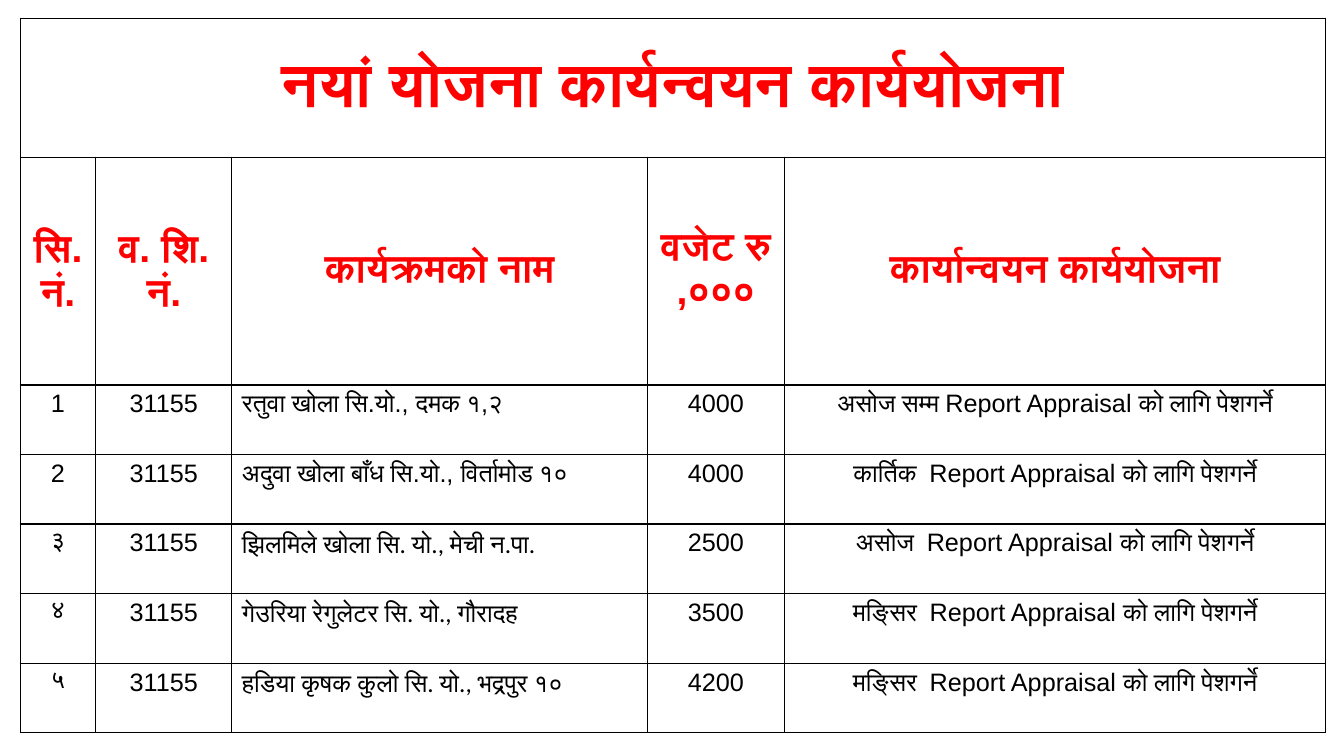
from dataclasses import dataclass

from lxml import etree
from pptx import Presentation
from pptx.dml.color import RGBColor
from pptx.enum.text import MSO_ANCHOR, PP_ALIGN
from pptx.oxml.ns import qn
from pptx.util import Inches, Pt

LEFT, CENTER = PP_ALIGN.LEFT, PP_ALIGN.CENTER
TOP, MIDDLE = MSO_ANCHOR.TOP, MSO_ANCHOR.MIDDLE
BLANK_LAYOUT = 6


@dataclass(frozen=True)
class Theme:
    heading: str = "FF0000"
    body: str = "000000"
    border: str = "000000"
    paper: str = "FFFFFF"
    title_size: int = 44
    header_size: int = 28
    body_size: int = 18
    border_width: int = 1
    font: str = "Arial"
    alternate_font: str = "Calibri"


class PlanSlide:
    def __init__(self, slide, theme):
        self.slide = slide
        self.theme = theme

    def add_grid(self, left, top, widths, heights):
        grid = self.slide.shapes.add_table(
            len(heights), len(widths), Inches(left), Inches(top),
            Inches(sum(widths)), Inches(sum(heights))).table
        for column, width in zip(grid.columns, widths):
            column.width = Inches(width)
        for row, height in zip(grid.rows, heights):
            row.height = Inches(height)
        for cell in grid.iter_cells():
            self.draw_borders(cell)
            cell.fill.solid()
            cell.fill.fore_color.rgb = RGBColor.from_string(self.theme.paper)
        return grid

    def draw_borders(self, cell):
        properties = cell._tc.get_or_add_tcPr()
        for side in ("a:lnL", "a:lnR", "a:lnT", "a:lnB"):
            edge = etree.SubElement(
                properties, qn(side), w=str(Pt(self.theme.border_width)))
            fill = etree.SubElement(edge, qn("a:solidFill"))
            etree.SubElement(fill, qn("a:srgbClr"), val=self.theme.border)

    def fill_cell(self, cell, text, size, color, bold=False, align=CENTER,
                  anchor=TOP, font=None):
        cell.vertical_anchor = anchor
        cell.text = text
        paragraph = cell.text_frame.paragraphs[0]
        paragraph.alignment = align
        paragraph.font.name = font or self.theme.font
        paragraph.font.size = Pt(size)
        paragraph.font.bold = bold
        paragraph.font.color.rgb = RGBColor.from_string(color)

    def add_heading(self, cell, text, size):
        self.fill_cell(cell, text, size, self.theme.heading, bold=True,
                       anchor=MIDDLE)

    def add_body(self, cell, text, align=CENTER, font=None):
        self.fill_cell(cell, text, self.theme.body_size, self.theme.body,
                       align=align, font=font)


def main():
    theme = Theme()
    title = "नयां योजना कार्यन्वयन कार्ययोजना"
    headers = ["सि. नं.", "व. शि. नं.", "कार्यक्रमको नाम", "वजेट रु ,०००",
               "कार्यान्वयन कार्ययोजना"]
    budget_code = "31155"
    action = " Report Appraisal को लागि पेशगर्ने"
    projects = [
        ("1", "रतुवा खोला सि.यो., दमक १,२", "4000", "असोज सम्म", theme.font),
        ("2", "अदुवा खोला बाँध सि.यो., विर्तामोड १०", "4000", "कार्तिक ",
         theme.font),
        ("३", "झिलमिले खोला सि. यो., मेची न.पा.", "2500", "असोज ",
         theme.alternate_font),
        ("४", "गेउरिया रेगुलेटर सि. यो., गौरादह", "3500", "मङ्सिर ",
         theme.alternate_font),
        ("५", "हडिया कृषक कुलो सि. यो., भद्रपुर १०", "4200", "मङ्सिर ",
         theme.alternate_font),
    ]

    deck = Presentation()
    deck.slide_width, deck.slide_height = Inches(13.33), Inches(7.5)
    slide = deck.slides.add_slide(deck.slide_layouts[BLANK_LAYOUT])
    plan = PlanSlide(slide, theme)
    grid = plan.add_grid(0.2, 0.18, [0.75, 1.35, 4.12, 1.36, 5.37],
                         [1.38, 2.26] + [0.69] * len(projects))

    grid.cell(0, 0).merge(grid.cell(0, len(headers) - 1))
    plan.add_heading(grid.cell(0, 0), title, theme.title_size)
    for column, header in enumerate(headers):
        plan.add_heading(grid.cell(1, column), header, theme.header_size)

    for row, (number, name, budget, month, name_font) in enumerate(projects, 2):
        plan.add_body(grid.cell(row, 0), number)
        plan.add_body(grid.cell(row, 1), budget_code)
        plan.add_body(grid.cell(row, 2), name, LEFT, name_font)
        plan.add_body(grid.cell(row, 3), budget)
        plan.add_body(grid.cell(row, 4), month + action)

    deck.save("out.pptx")


if __name__ == "__main__":
    main()
